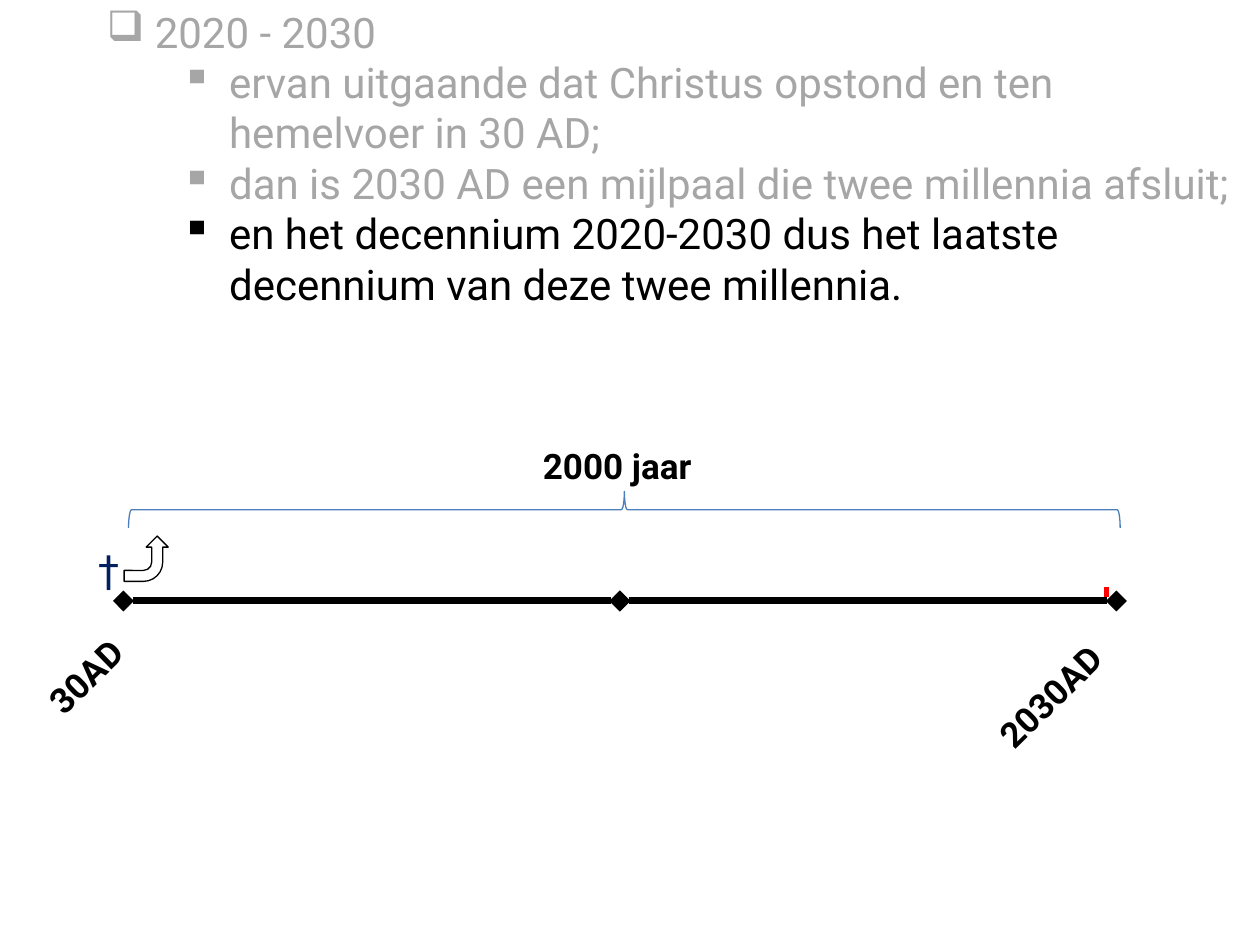
from dataclasses import dataclass

from lxml import etree
from pptx import Presentation, util as u
from pptx.dml.color import RGBColor
from pptx.enum import shapes, text
from pptx.oxml.ns import qn

COLS, ROWS = 10, 7.5
SIDE = u.Inches(1)  # one grid cell is square
HEX = {"past": "A6A6A6", "ink": "000000", "cross": "002060",
       "mark": "FF0000", "brace": "4B7EBC"}
START, END, AXIS = 0.98, 8.86, 4.77
MID = (START + END) / 2


@dataclass
class Point:
    words: str
    mark: str = "▪"
    level: int = 1
    margin: float = 0.97
    color: str = "past"


@dataclass
class Label:
    words: str
    box: tuple[float, float, float, float]
    turn: float = 0
    size: int = 20
    font: str = "Roboto"
    color: str = "ink"
    bold: bool = True
    wrap: bool = True


@dataclass
class Line:
    start: tuple[float, float]
    end: tuple[float, float]
    color: str = "ink"
    width: float = 4
    tip: str = "diamond"


@dataclass
class Form:
    kind: shapes.MSO_SHAPE
    box: tuple[float, float, float, float]
    turn: float
    color: str
    flip: bool = False


POINTS = [
    Point("2020 - 2030", "❑", 0, 0.38),
    Point("ervan uitgaande dat Christus opstond en ten hemelvoer in 30 AD;"),
    Point("dan is 2030 AD een mijlpaal die twee millennia afsluit;"),
    Point("en het decennium 2020-2030 dus het laatste decennium van deze "
          "twee millennia.", color="ink"),
]
LINES = [
    Line((START, AXIS), (MID, AXIS)),
    Line((MID, AXIS), (END, AXIS)),
    Line((8.78, 4.66), (8.78, 4.74), "mark", 2.75, ""),
]
LABELS = [
    Label("30AD", (0.21, 5.08, 1.08, 0.44), 315.6),
    Label("†", (0.68, 4.27, 0.42, 0.5), 0, 24, "DejaVu Sans", "cross",
          False, False),
    Label("2030AD", (7.69, 5.2, 1.51, 0.44), 315.6),
    Label("2000 jaar", (4.21, 3.48, 1.78, 0.44)),
]
FORMS = [
    Form(shapes.MSO_SHAPE.BENT_ARROW, (START, 4.26, 0.36, 0.35), 270,
         "ink", True),
    Form(shapes.MSO_SHAPE.LEFT_BRACE, (4.81, 0.11, 0.29, 7.87), 90, "brace"),
]


def grid(cells) -> list[int]:
    return [round(c * SIDE) for c in cells]


def rgb(name: str) -> RGBColor:
    return RGBColor.from_string(HEX[name])


def add_run(para, words: str, size: int, font: str, color: str,
            bold: bool = False) -> None:
    run = para.add_run()
    run.text = words
    run.font.size = u.Pt(size)
    run.font.name = font
    run.font.bold = bold
    run.font.color.rgb = rgb(color)


def add_frame(slide, box, wrap: bool = True, turn: float = 0):
    shape = slide.shapes.add_textbox(*grid(box))
    shape.rotation = turn
    frame = shape.text_frame
    frame.word_wrap = wrap
    frame.auto_size = text.MSO_AUTO_SIZE.SHAPE_TO_FIT_TEXT
    return frame


def add_points(slide, points: list[Point]) -> None:
    frame = add_frame(slide, (0.75, 0, 9.25, 2.93))
    for i, point in enumerate(points):
        para = frame.add_paragraph() if i else frame.paragraphs[0]
        para.level = point.level
        props = para._p.get_or_add_pPr()
        props.set("marL", str(u.Inches(point.margin)))
        props.set("indent", str(u.Inches(-0.38)))
        etree.SubElement(props, qn("a:buChar"), char=point.mark)
        add_run(para, point.words, 24, "Roboto", point.color)


def add_label(slide, label: Label) -> None:
    frame = add_frame(slide, label.box, label.wrap, label.turn)
    add_run(frame.paragraphs[0], label.words, label.size, label.font,
            label.color, label.bold)


def add_line(slide, line: Line) -> None:
    link = slide.shapes.add_connector(
        shapes.MSO_CONNECTOR.STRAIGHT, *grid(line.start + line.end))
    link.line.color.rgb = rgb(line.color)
    link.line.width = u.Pt(line.width)
    if line.tip:
        for end in ("a:headEnd", "a:tailEnd"):
            etree.SubElement(link.line._get_or_add_ln(), qn(end),
                             type=line.tip)
    etree.SubElement(link._element.spPr, qn("a:effectLst"))


def add_form(slide, form: Form) -> None:
    shape = slide.shapes.add_shape(form.kind, *grid(form.box))
    shape.rotation = form.turn
    shape.shadow.inherit = False
    shape.fill.background()
    shape.line.color.rgb = rgb(form.color)
    shape.line.width = u.Pt(0.75)
    if form.flip:
        shape._element.spPr.find(qn("a:xfrm")).set("flipV", "1")


def main() -> None:
    deck = Presentation()
    deck.slide_width, deck.slide_height = grid((COLS, ROWS))
    slide = deck.slides.add_slide(deck.slide_layouts[6])
    add_points(slide, POINTS)
    for draw, items in ((add_line, LINES), (add_label, LABELS),
                        (add_form, FORMS)):
        for item in items:
            draw(slide, item)
    deck.save("out.pptx")


if __name__ == "__main__":
    main()
